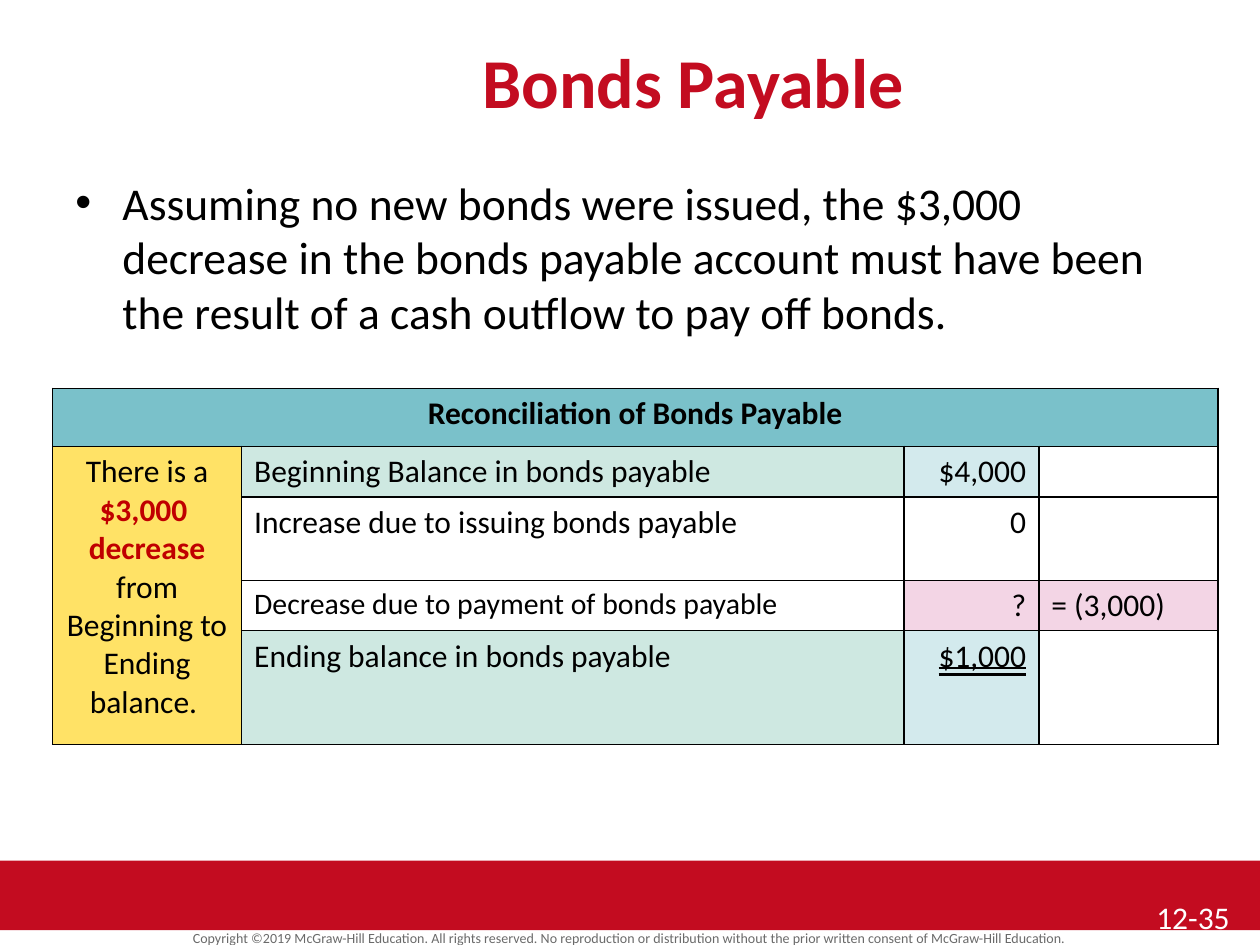
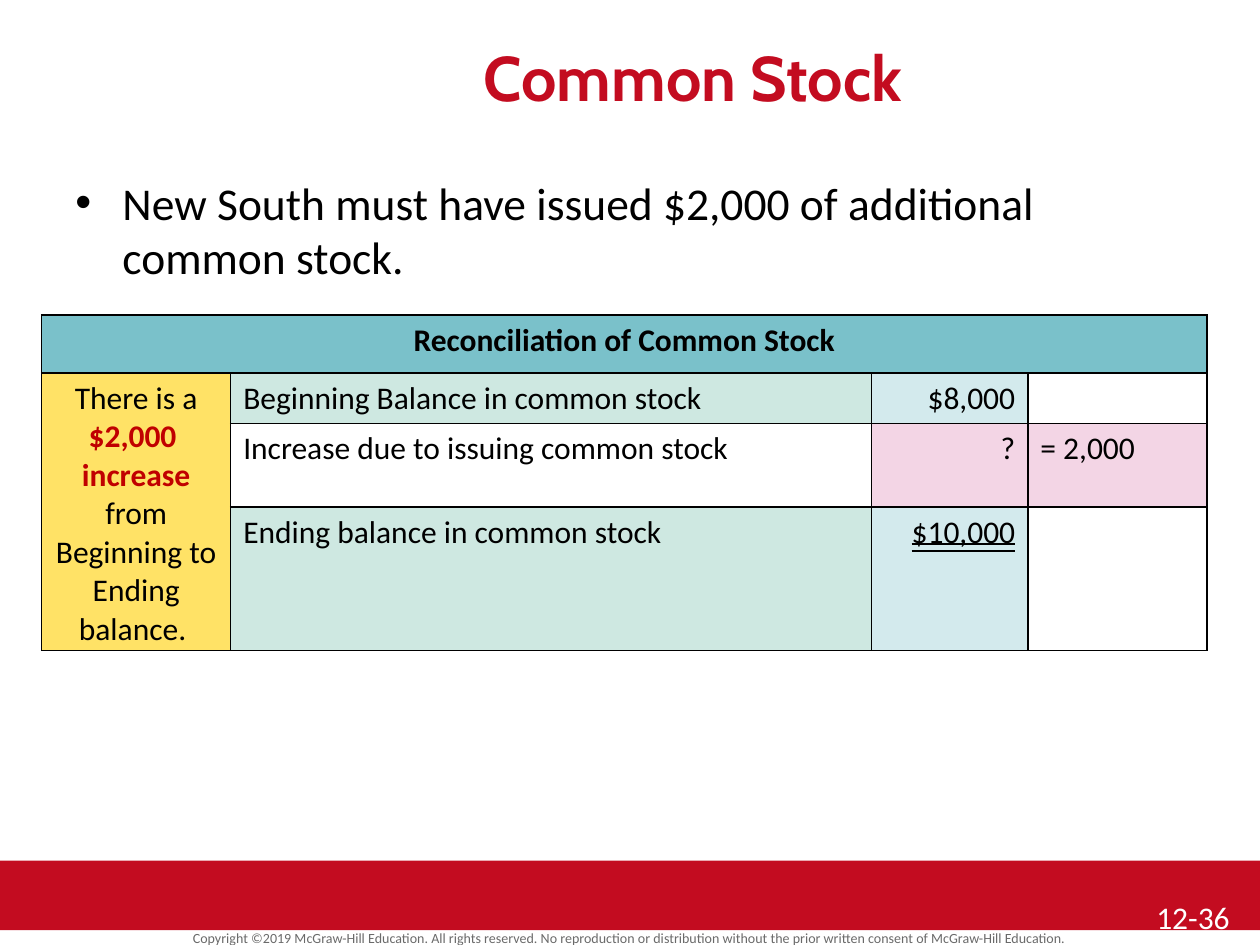
from dataclasses import dataclass
from lxml.etree import SubElement
from pptx import Presentation
from pptx.dml.color import RGBColor
from pptx.enum.shapes import MSO_SHAPE
from pptx.enum.text import MSO_ANCHOR, MSO_UNDERLINE, PP_ALIGN
from pptx.oxml.ns import qn
from pptx.util import Cm, Pt


@dataclass(frozen=True)
class Theme:
    red: str = "C30C20"
    emphasis: str = "C00000"
    black: str = "000000"
    white: str = "FFFFFF"
    grey: str = "6A6A6A"
    header: str = "7AC1CA"
    remark: str = "FFE266"
    balance_label: str = "CEE8E1"
    balance_amount: str = "D3EAED"
    unknown: str = "F3D5E5"
    font: str = "Calibri"
    body_size: int = 26
    table_size: int = 18
    small_size: int = 8


THEME = Theme()
WIDTH, HEIGHT = 25.4, 19.05
TABLE_WIDTH, REMARK_WIDTH, NOTE_WIDTH = 23.49, 3.81, 3.61
HEADER_HEIGHT = 1.17
COPYRIGHT = (
    "Copyright ©2019 McGraw-Hill Education. All rights reserved. No reproduction "
    "or distribution without the prior written consent of McGraw-Hill Education."
)


@dataclass
class Entry:
    """One table line; kind is balance, ending, change or unknown."""
    label: str
    amount: str
    height: float
    kind: str
    note: str = ""
    label_size: float = THEME.table_size


def write(para, text, *, size=THEME.table_size, color=THEME.black, font=THEME.font,
          bold=False, underline=None, align=None):
    span = para.add_run()
    span.text = text
    span.font.name = font
    span.font.size = Pt(size)
    span.font.bold = bold
    span.font.underline = underline
    span.font.color.rgb = RGBColor.from_string(color)
    if align is not None:
        para.alignment = align


def add_text_box(page, left, top, width, height):
    frame = page.shapes.add_textbox(Cm(left), Cm(top), Cm(width), Cm(height)).text_frame
    frame.word_wrap = True
    return frame


def add_title(page, text, **style):
    title = page.shapes.title
    title.left, title.top, title.width, title.height = Cm(2.54), Cm(0.64), Cm(22.86), Cm(1.7)
    title.text_frame.vertical_anchor = MSO_ANCHOR.TOP
    write(title.text_frame.paragraphs[0], text, color=THEME.red, bold=True,
          align=PP_ALIGN.CENTER, **style)


def add_bullet(page, text):
    para = add_text_box(page, 1.27, 3.4, 22.86, 13.13).paragraphs[0]
    properties = para._p.get_or_add_pPr()
    properties.set("marL", str(Cm(0.95)))
    properties.set("indent", str(Cm(-0.95)))
    SubElement(properties, qn("a:buFont")).set("typeface", "Arial")
    SubElement(properties, qn("a:buChar")).set("char", "•")
    write(para, text, size=THEME.body_size)


def add_footer(page, number):
    band = page.shapes.add_shape(MSO_SHAPE.RECTANGLE, 0, Cm(17.35), Cm(WIDTH), Cm(1.4))
    band.shadow.inherit = False
    band.fill.solid()
    band.fill.fore_color.rgb = RGBColor.from_string(THEME.red)
    band.line.fill.background()

    frame = add_text_box(page, 0, 18.69, WIDTH, 0.48)
    frame.vertical_anchor = MSO_ANCHOR.MIDDLE
    frame.paragraphs[0].line_spacing = 0.8
    write(frame.paragraphs[0], COPYRIGHT, size=THEME.small_size, color=THEME.grey,
          align=PP_ALIGN.CENTER)

    frame = add_text_box(page, 23.06, 17.98, 2.34, 1.07)
    write(frame.paragraphs[0], number, color=THEME.white)


def format_cell(cell, fill=None):
    properties = cell._tc.get_or_add_tcPr()
    for side in ("lnL", "lnR", "lnT", "lnB"):
        line = SubElement(properties, qn(f"a:{side}"), w=str(Pt(1)))
        paint = SubElement(line, qn("a:solidFill"))
        SubElement(paint, qn("a:srgbClr"), val=THEME.black)
    if fill:
        cell.fill.solid()
        cell.fill.fore_color.rgb = RGBColor.from_string(fill)
    else:
        cell.fill.background()


def fill_remark(cell, change, direction):
    first = cell.text_frame.paragraphs[0]
    second = cell.text_frame.add_paragraph()
    strong = {"color": THEME.emphasis, "bold": True}
    write(first, "There is a ", align=PP_ALIGN.CENTER)
    write(first, f"{change} ", **strong)
    write(second, f"{direction} ", align=PP_ALIGN.CENTER, **strong)
    write(second, "from Beginning to Ending balance. ")


def fill_entry(cells, entry):
    is_balance = entry.kind in ("balance", "ending")
    is_unknown = entry.kind == "unknown"
    label_fill = THEME.balance_label if is_balance else None
    note_fill = THEME.unknown if is_unknown else None
    amount_fill = THEME.balance_amount if is_balance else note_fill
    for cell, fill in zip(cells, (label_fill, amount_fill, note_fill)):
        format_cell(cell, fill)

    label, amount, note = (cell.text_frame.paragraphs[0] for cell in cells)
    write(label, entry.label, size=entry.label_size)
    write(amount, entry.amount, align=PP_ALIGN.RIGHT,
          underline=MSO_UNDERLINE.DOUBLE_LINE if entry.kind == "ending" else None)
    if entry.note:
        write(note, entry.note)
    else:
        note.font.size = Pt(THEME.table_size)


def add_reconciliation(page, left, top, amount_width, account, change, direction, entries):
    heights = [HEADER_HEIGHT, *(entry.height for entry in entries)]
    label_width = TABLE_WIDTH - REMARK_WIDTH - amount_width - NOTE_WIDTH
    table = page.shapes.add_table(len(heights), 4, Cm(left), Cm(top),
                                  Cm(TABLE_WIDTH), Cm(sum(heights))).table
    table.first_row = table.horz_banding = False
    for column, width in zip(table.columns,
                             (REMARK_WIDTH, label_width, amount_width, NOTE_WIDTH)):
        column.width = Cm(width)
    for row, height in zip(table.rows, heights):
        row.height = Cm(height)

    header, remark = table.cell(0, 0), table.cell(1, 0)
    header.merge(table.cell(0, 3))
    remark.merge(table.cell(len(entries), 0))
    for column in range(4):
        format_cell(table.cell(0, column), THEME.header)
    for row in range(1, len(heights)):
        format_cell(table.cell(row, 0), THEME.remark)

    write(header.text_frame.paragraphs[0], f"Reconciliation of {account}", bold=True,
          align=PP_ALIGN.CENTER)
    fill_remark(remark, change, direction)
    for row, entry in enumerate(entries, start=1):
        fill_entry([table.cell(row, column) for column in (1, 2, 3)], entry)


def add_account_page(deck, number, account, title_style, message, **reconciliation):
    page = deck.slides.add_slide(deck.slide_layouts[5])
    add_footer(page, number)
    add_title(page, account, **title_style)
    add_bullet(page, message)
    add_reconciliation(page, account=account, **reconciliation)


def main():
    deck = Presentation()
    deck.slide_width, deck.slide_height = Cm(WIDTH), Cm(HEIGHT)
    add_account_page(
        deck, "12-35", "Bonds Payable", {"size": 40},
        "Assuming no new bonds were issued, the $3,000 decrease in the bonds payable "
        "account must have been the result of a cash outflow to pay off bonds.",
        left=1.06, top=7.83, amount_width=2.72, change="$3,000", direction="decrease",
        entries=[
            Entry("Beginning Balance in bonds payable", "$4,000", 0.97, "balance"),
            Entry("Increase due to issuing bonds payable", "0", 1.68, "change"),
            Entry("Decrease due to payment of bonds payable", "?", 0.97, "unknown",
                  note="= (3,000)", label_size=17),
            Entry("Ending balance in bonds payable", "$1,000", 2.29, "ending"),
        ])
    add_account_page(
        deck, "12-36", "Common Stock", {"size": 36, "font": "Cabin"},
        "New South must have issued $2,000 of additional common stock.",
        left=0.84, top=6.35, amount_width=3.15, change="$2,000", direction="increase",
        entries=[
            Entry("Beginning Balance in common stock", "$8,000", 0.97, "balance"),
            Entry("Increase due to issuing common stock", "?", 1.68, "unknown",
                  note="= 2,000"),
            Entry("Ending balance in common stock", "$10,000", 2.29, "ending"),
        ])
    deck.save("out.pptx")


if __name__ == "__main__":
    main()
